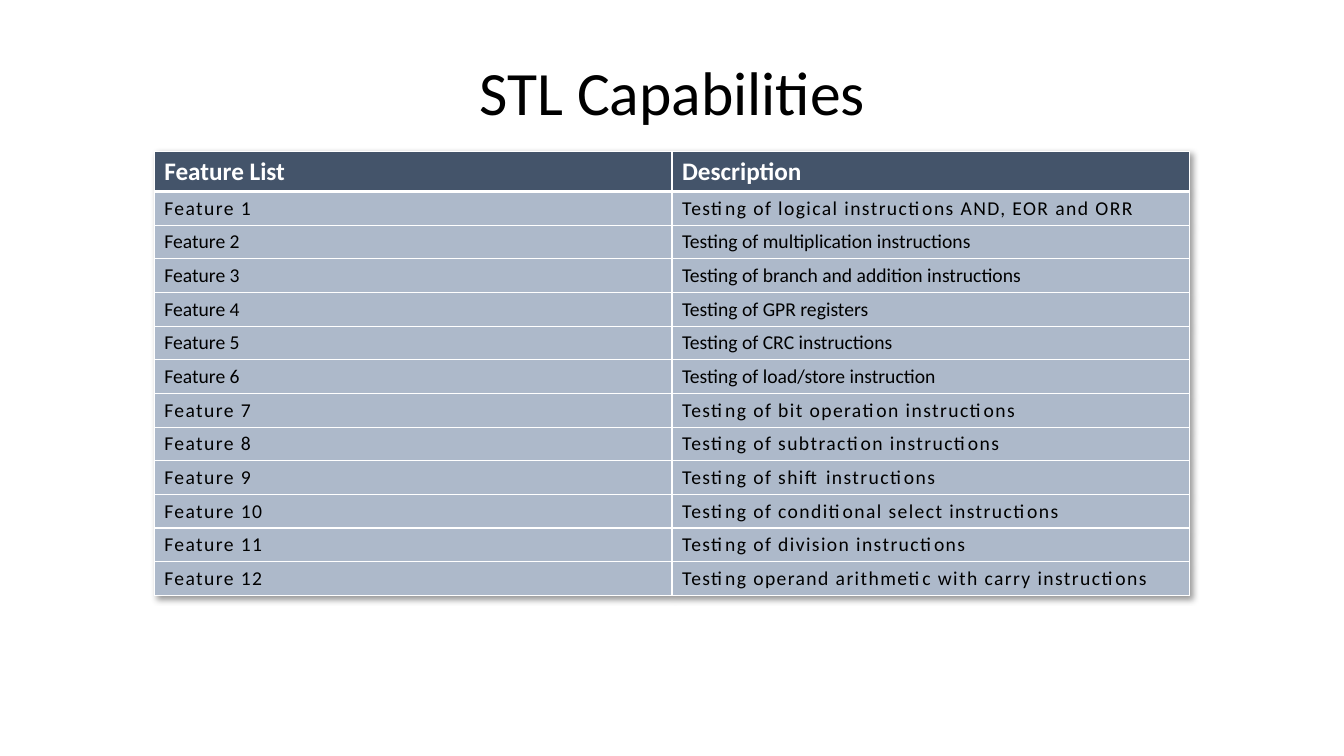
from lxml.etree import SubElement
from pptx import Presentation
from pptx.dml.color import RGBColor
from pptx.enum.text import MSO_ANCHOR, PP_ALIGN
from pptx.oxml import parse_xml
from pptx.oxml.ns import nsdecls, qn
from pptx.util import Inches, Pt

WHITE = RGBColor(0xFF, 0xFF, 0xFF)
BLACK = RGBColor(0x00, 0x00, 0x00)
HEADER_FILL = RGBColor(0x44, 0x54, 0x6A)
BODY_FILL = RGBColor(0xAD, 0xB9, 0xCA)
FONT = "Calibri"

HEADINGS = ("Feature List", "Description")
DESCRIPTIONS = (
    "Testing of logical instructions AND, EOR and ORR",
    "Testing of multiplication instructions",
    "Testing of branch and addition instructions",
    "Testing of GPR registers",
    "Testing of CRC instructions",
    "Testing of load/store instruction",
    "Testing of bit operation instructions",
    "Testing of subtraction instructions",
    "Testing of shift instructions",
    "Testing of conditional select instructions",
    "Testing of division instructions",
    "Testing operand arithmetic with carry instructions",
)
UNSPACED_FEATURES = range(2, 7)
HEADER_HEIGHT, BODY_HEIGHT = 0.4, 0.33


def add_run(paragraph, text, size, color, bold=False, spacing=0):
    run = paragraph.add_run()
    run.text = text
    run.font.name = FONT
    run.font.size = Pt(size)
    run.font.bold = bold
    run.font.color.rgb = color
    if spacing:
        run.font._element.set("spc", str(spacing * 100))


def add_title(slide, left, top, width, height):
    title = slide.shapes.add_textbox(
        Inches(left), Inches(top), Inches(width), Inches(height)).text_frame
    title.word_wrap = True
    title.vertical_anchor = MSO_ANCHOR.MIDDLE
    heading = title.paragraphs[0]
    heading.alignment = PP_ALIGN.CENTER
    heading.line_spacing = 0.9
    add_run(heading, "STL Capabilities", 44, BLACK)


def set_borders(cell, bottom_width):
    properties = cell._tc.get_or_add_tcPr()
    for side, width in (("L", 1), ("R", 1), ("T", 1), ("B", bottom_width)):
        line = SubElement(properties, qn(f"a:ln{side}"), w=str(Pt(width)))
        fill = SubElement(line, qn("a:solidFill"))
        SubElement(fill, qn("a:srgbClr"), val=str(WHITE))


def add_table_shadow(table):
    table._tbl.tblPr.insert(0, parse_xml(
        f'<a:effectLst {nsdecls("a")}>'
        '<a:outerShdw blurRad="50800" dist="38100" dir="2700000" algn="tl">'
        '<a:srgbClr val="000000"><a:alpha val="40000"/></a:srgbClr>'
        '</a:outerShdw></a:effectLst>'))


def add_feature_table(slide, left, top, width):
    rows = [HEADINGS] + [
        (f"Feature {number}", text) for number, text in enumerate(DESCRIPTIONS, 1)]
    height = HEADER_HEIGHT + BODY_HEIGHT * len(DESCRIPTIONS)
    table = slide.shapes.add_table(
        len(rows), len(HEADINGS),
        Inches(left), Inches(top), Inches(width), Inches(height)).table
    table.horz_banding = False
    add_table_shadow(table)

    for number, texts in enumerate(rows):
        is_header = number == 0
        table.rows[number].height = Inches(HEADER_HEIGHT if is_header else BODY_HEIGHT)
        for column, text in enumerate(texts):
            cell = table.cell(number, column)
            # The line under the header is heavier on both sides of the edge
            set_borders(cell, 3 if is_header else 1)
            cell.fill.solid()
            cell.fill.fore_color.rgb = HEADER_FILL if is_header else BODY_FILL
            paragraph = cell.text_frame.paragraphs[0]
            if is_header:
                add_run(paragraph, text, 18, WHITE, bold=True)
            else:
                spacing = 0 if number in UNSPACED_FEATURES else 1
                add_run(paragraph, text, 14, BLACK, spacing=spacing)


def main():
    presentation = Presentation()
    presentation.slide_width = Inches(13.33)
    presentation.slide_height = Inches(7.5)
    slide = presentation.slides.add_slide(presentation.slide_layouts[6])
    slide.background.fill.solid()
    slide.background.fill.fore_color.rgb = WHITE

    add_title(slide, 0.92, 0.4, 11.5, 1.1)
    add_feature_table(slide, 1.53, 1.5, 10.27)
    presentation.save("out.pptx")


if __name__ == "__main__":
    main()
